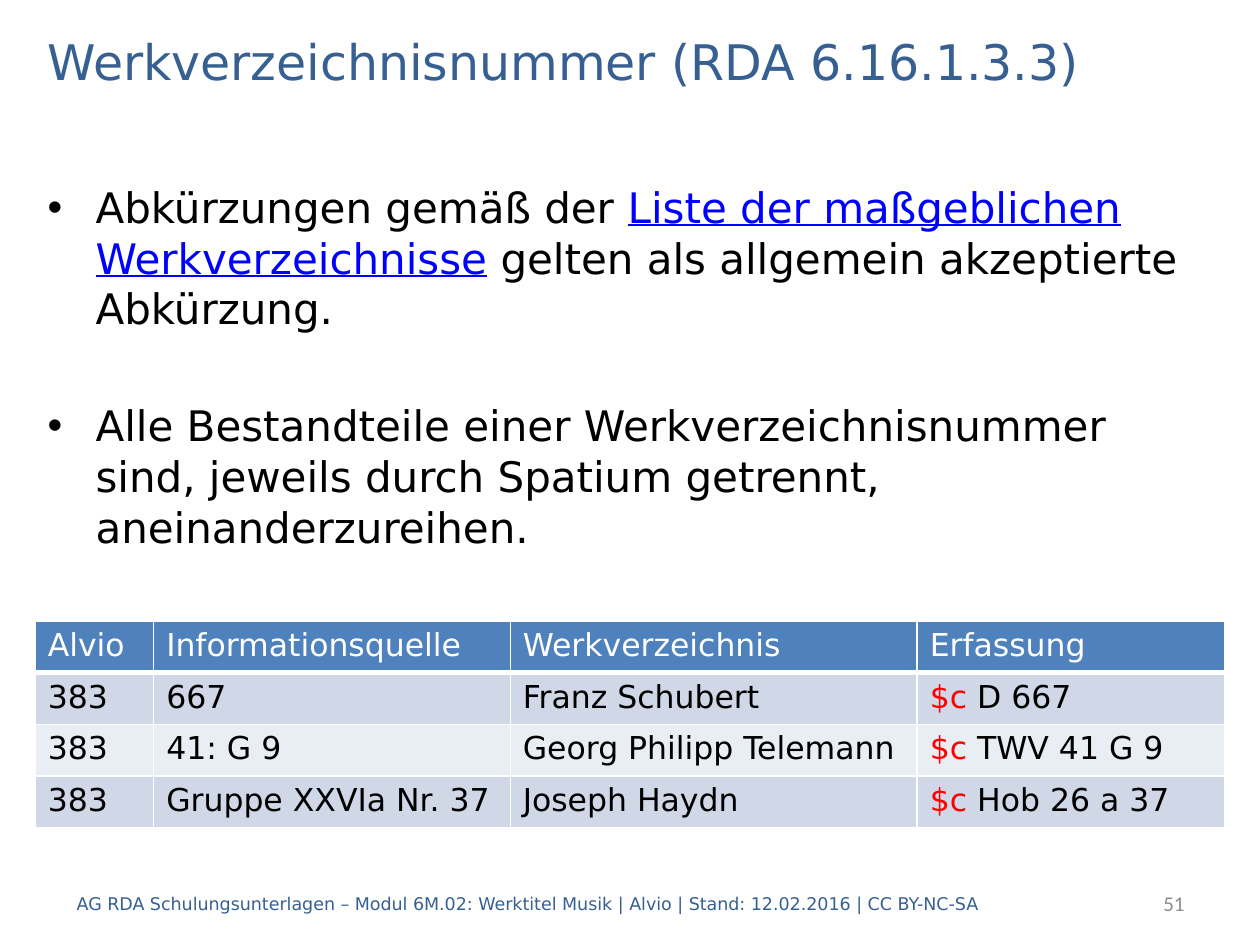
import pptx
import pptx.dml.color
import pptx.enum.text
import pptx.oxml
import pptx.oxml.ns
import pptx.util
from pptx.util import Inches

SANS = "DejaVu Sans"
BLUE, BLACK, WHITE, RED = "376092", "000000", "FFFFFF", "FF0000"
LINK, GREY, HEAD = "0000FF", "8C8C8C", "4F81BD"
BANDS = ["D0D8E8", "E9EDF4"]
ALIGN = pptx.enum.text.PP_ALIGN
ANCHOR = pptx.enum.text.MSO_ANCHOR


def color(code):
    return pptx.dml.color.RGBColor.from_string(code)


def make(tag, body="", attrs=""):
    """Build one drawing element."""
    names = pptx.oxml.ns.nsdecls("a")
    return pptx.oxml.parse_xml(f"<a:{tag} {names} {attrs}>{body}</a:{tag}>")


class Deck:
    def __init__(self, slide, font=SANS):
        self.slide = slide
        self.font = font

    def run(self, para, text, size, code=BLACK, font=None, under=False):
        part = para.add_run()
        part.text = text
        face = part.font
        face.name = font or self.font
        face.size = pptx.util.Pt(size)
        face.color.rgb = color(code)
        face.bold = False
        face.underline = under

    def box(self, left, top, width, height, anchor=ANCHOR.MIDDLE):
        shape = self.slide.shapes.add_textbox(
            Inches(left), Inches(top), Inches(width), Inches(height))
        frame = shape.text_frame
        frame.word_wrap = True
        frame.vertical_anchor = anchor
        return frame

    def label(self, place, text, size, code, font=None, align=ALIGN.LEFT):
        para = self.box(*place).paragraphs[0]
        para.alignment = align
        self.run(para, text, size, code, font)

    def bullets(self, place, items, size, inset, gap, pitch):
        frame = self.box(*place, anchor=ANCHOR.TOP)
        frame.margin_top = Inches(inset)
        for i, runs in enumerate(items):
            para = frame.add_paragraph() if i else frame.paragraphs[0]
            para.line_spacing = pptx.util.Pt(pitch)
            if i:
                para.space_before = pptx.util.Pt(gap)
            props = para._p.get_or_add_pPr()
            props.set("marL", str(Inches(0.38)))
            props.set("indent", str(-Inches(0.38)))
            props.append(make("buFont", attrs='typeface="Arial"'))
            props.append(make("buChar", attrs='char="•"'))
            for text, code, under in runs:
                self.run(para, text, size, code, under=under)

    def edge(self, cell, widths):
        props = cell._tc.get_or_add_tcPr()
        fill = f'<a:solidFill><a:srgbClr val="{WHITE}"/></a:solidFill>'
        for i, (side, width) in enumerate(zip("LRTB", widths)):
            size = f'w="{pptx.util.Pt(width)}"'
            props.insert(i, make("ln" + side, fill, size))

    def table(self, left, top, cols, high, rows, size):
        grid = self.slide.shapes.add_table(
            len(rows), len(cols), Inches(left), Inches(top),
            Inches(sum(cols)), Inches(high * len(rows))).table
        for col, width in zip(grid.columns, cols):
            col.width = Inches(width)
        for r, row in enumerate(rows):
            grid.rows[r].height = Inches(high)
            for c, text in enumerate(row):
                cell = grid.cell(r, c)
                cell.fill.solid()
                cell.fill.fore_color.rgb = color(BANDS[(r - 1) % 2] if r else HEAD)
                self.edge(cell, (1, 1, 3 if r == 1 else 1, 1 if r else 3))
                para = cell.text_frame.paragraphs[0]
                # Subfield codes stand out in red
                if text.startswith("$c"):
                    self.run(para, "$c", size, RED)
                    text = text[2:]
                self.run(para, text, size, BLACK if r else WHITE)


def main():
    show = pptx.Presentation()
    show.slide_width, show.slide_height = Inches(10), Inches(7.5)
    deck = Deck(show.slides.add_slide(show.slide_layouts[6]))

    # Body
    deck.bullets((0.28, 0.92, 9.45, 5.98), [
        [("Abkürzungen gemäß der ", BLACK, False),
         ("Liste der maßgeblichen Werkverzeichnisse", LINK, True),
         (" gelten als allgemein akzeptierte Abkürzung.", BLACK, False)],
        [("Alle Bestandteile einer Werkverzeichnisnummer sind, jeweils durch "
          "Spatium getrennt, aneinanderzureihen.", BLACK, False)],
    ], size=24, inset=0.52, gap=38, pitch=28.9)

    # Page number, title and footer
    deck.label((7.91, 6.97, 1.59, 0.4), "51", 12, GREY, "Calibri", ALIGN.RIGHT)
    deck.label((0.28, 0.2, 9.45, 0.56),
               "Werkverzeichnisnummer (RDA 6.16.1.3.3)", 28, BLUE)
    deck.label((0.51, 6.97, 8.35, 0.4),
               "AG RDA Schulungsunterlagen – Modul 6M.02: Werktitel Musik | "
               "Alvio | Stand: 12.02.2016 | CC BY-NC-SA", 10, BLUE)

    # Examples
    deck.table(0.28, 4.93, [0.94, 2.83, 3.23, 2.44], 0.41, [
        ["Alvio", "Informationsquelle", "Werkverzeichnis", "Erfassung"],
        ["383", "667", "Franz Schubert", "$c D 667"],
        ["383", "41: G 9", "Georg Philipp Telemann", "$c TWV 41 G 9"],
        ["383", "Gruppe XXVIa Nr. 37", "Joseph Haydn", "$c Hob 26 a 37"],
    ], size=18)

    show.save("out.pptx")


if __name__ == "__main__":
    main()
